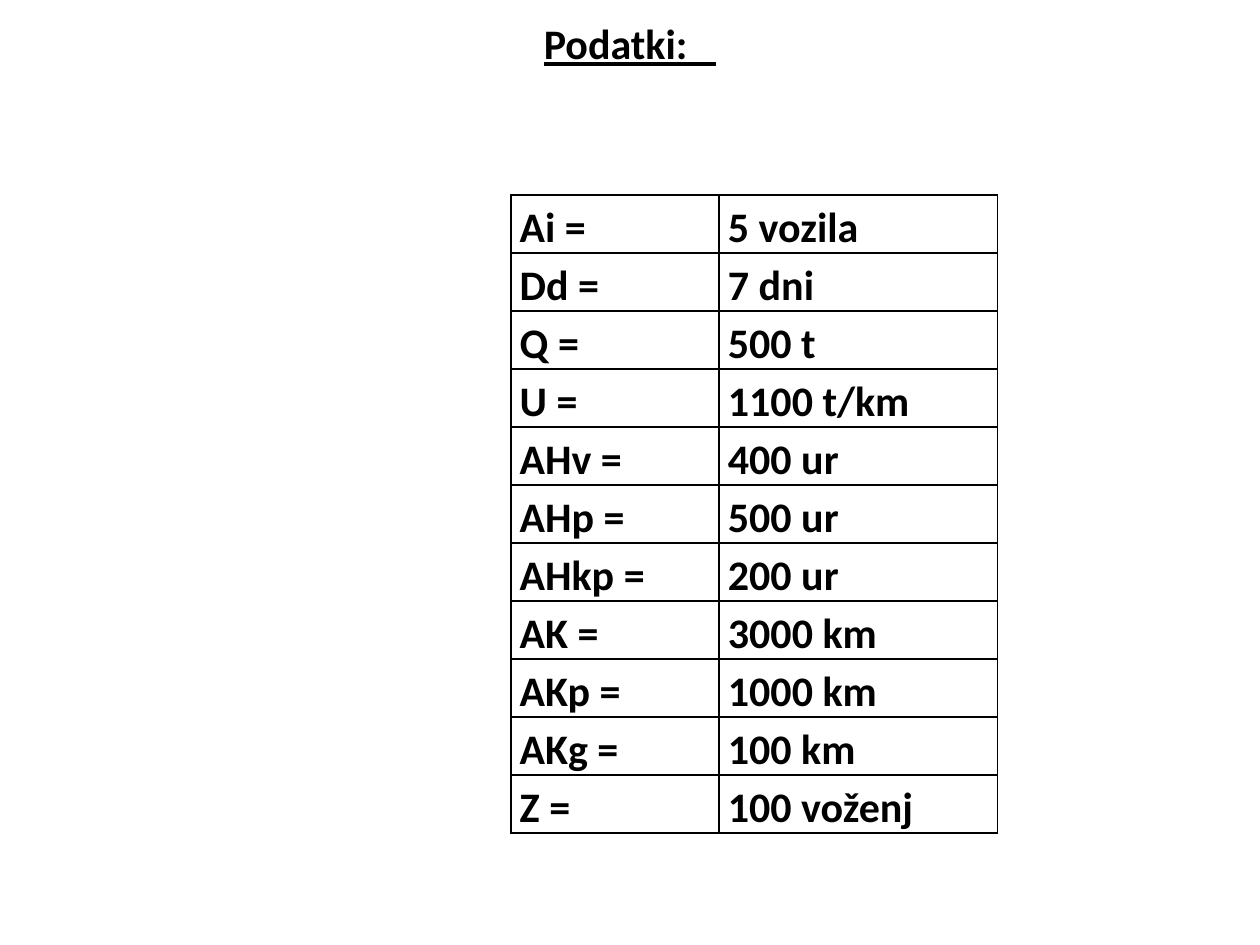
import pptx
import pptx.dml.color
import pptx.enum.text
import pptx.oxml
import pptx.oxml.ns
import pptx.util
from lxml import etree

Pt = pptx.util.Pt
COLORS = {"text": "000000", "border": "000000"}
FONT = {"name": "Calibri", "size": Pt(24), "bold": True}
TITLE_FONT = {**FONT, "underline": True}
CELL_MARGINS = {
    "margin_left": Pt(5),
    "margin_right": Pt(5),
    "margin_top": 0,
    "margin_bottom": 0,
}
ROWS = [
    ("Ai =", "5 vozila"),
    ("Dd =", "7 dni"),
    ("Q =", "500 t"),
    ("U =", "1100 t/km"),
    ("AHv =", "400 ur"),
    ("AHp =", "500 ur"),
    ("AHkp =", "200 ur"),
    ("AK =", "3000 km"),
    ("AKp =", "1000 km"),
    ("AKg =", "100 km"),
    ("Z =", "100 voženj"),
]


def set_attributes(target, values):
    for name, value in values.items():
        setattr(target, name, value)


def write_text(paragraph, text, font):
    run = paragraph.add_run()
    run.text = text
    set_attributes(run.font, font)
    run.font.color.rgb = pptx.dml.color.RGBColor.from_string(COLORS["text"])


def add_borders(cell):
    properties = cell._tc.get_or_add_tcPr()
    qn = pptx.oxml.ns.qn
    for position, side in enumerate(("lnL", "lnR", "lnT", "lnB")):
        line = etree.Element(qn(f"a:{side}"), w=str(Pt(1)))
        fill = etree.SubElement(line, qn("a:solidFill"))
        etree.SubElement(fill, qn("a:srgbClr"), val=COLORS["border"])
        properties.insert(position, line)


def add_title(slide, left, top, width, height):
    frame = slide.shapes.add_textbox(Pt(left), Pt(top), Pt(width), Pt(height)).text_frame
    set_attributes(frame, {
        "word_wrap": True,
        "margin_top": 0,
        "margin_bottom": 0,
        "vertical_anchor": pptx.enum.text.MSO_ANCHOR.TOP,
    })
    paragraph = frame.paragraphs[0]
    paragraph.alignment = pptx.enum.text.PP_ALIGN.CENTER
    write_text(paragraph, "Podatki:   ", TITLE_FONT)


def add_data_table(slide, left, top, width, height):
    table = slide.shapes.add_table(
        len(ROWS), 2, Pt(left), Pt(top), Pt(width), Pt(height)
    ).table
    set_attributes(table, {"first_row": False, "horz_banding": False})
    label_width = 119
    table.columns[0].width = Pt(label_width)
    table.columns[1].width = Pt(width - label_width)
    for row_index, values in enumerate(ROWS):
        table.rows[row_index].height = Pt(height / len(ROWS))
        for column_index, text in enumerate(values):
            cell = table.cell(row_index, column_index)
            set_attributes(cell, CELL_MARGINS)
            cell.fill.background()
            add_borders(cell)
            paragraph = cell.text_frame.paragraphs[0]
            paragraph.line_spacing = 1.15
            write_text(paragraph, text, FONT)


def main():
    presentation = pptx.Presentation()
    set_attributes(presentation, {"slide_width": Pt(720), "slide_height": Pt(540)})
    slide = presentation.slides.add_slide(presentation.slide_layouts[6])
    add_title(slide, 36, 10, 648, 67)
    add_data_table(slide, 292, 111.5, 278, 341)
    presentation.save("out.pptx")


if __name__ == "__main__":
    main()
